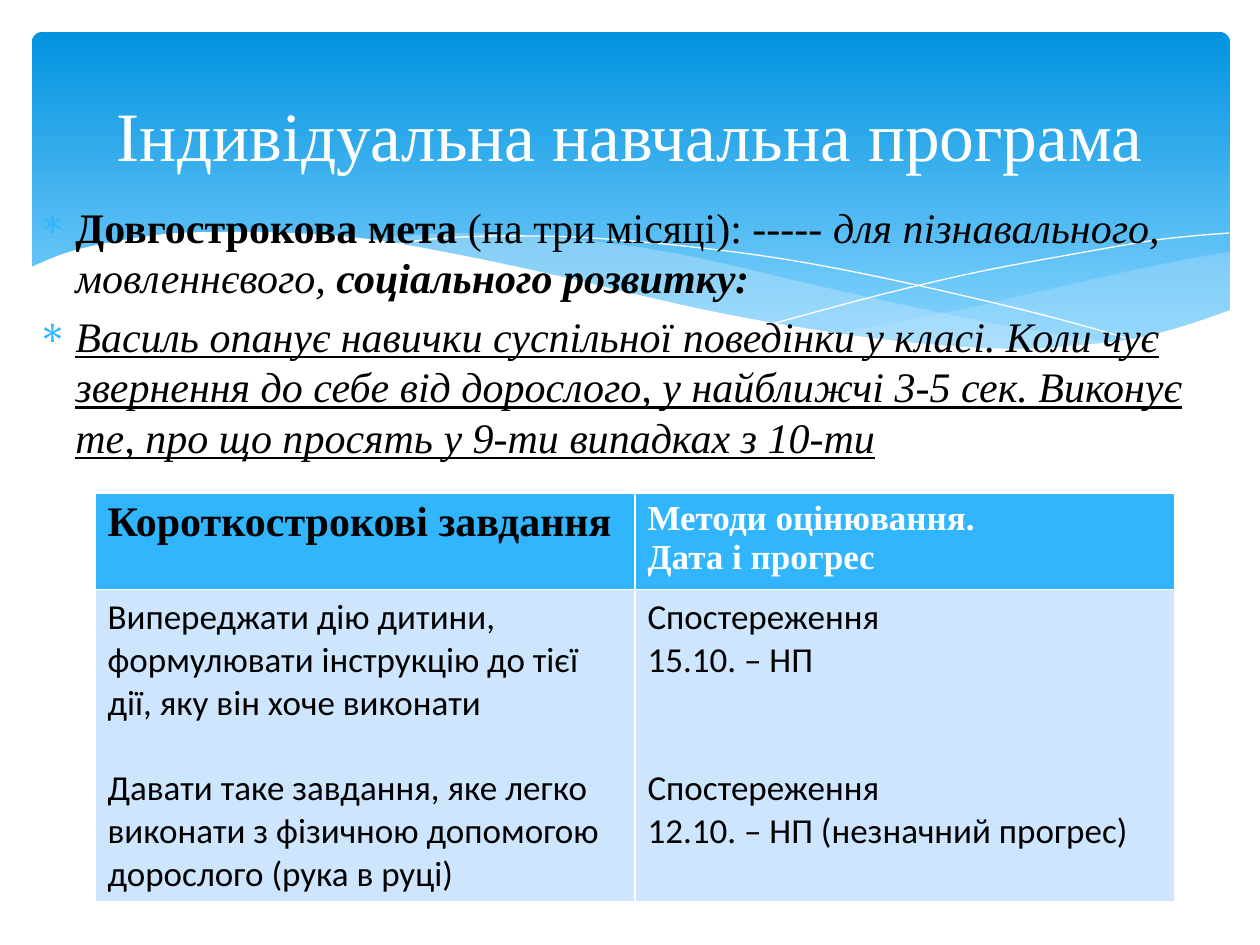
from lxml import etree
from pptx import Presentation
from pptx import util as u
from pptx.dml.color import RGBColor
from pptx.enum import shapes, text
from pptx.oxml.ns import qn

PX = 914400 / 126
COLORS = {"white": "FFFFFF", "black": "000000", "sky": "31B6FD", "pale": "CEE5FE",
          "mist": "C6E7FC", "top": "0293E0", "bottom": "83D3FE"}
SERIF, SANS = "Times New Roman", "Calibri"

# Content: runs are (text, style letters: b bold, i italic, u underline)
TITLE = "Індивідуальна навчальна програма"
GOALS = [
    [("Довгострокова мета ", "b"), ("(на три місяці): ----- ", ""),
     ("для пізнавального, мовленнєвого, ", "i"), ("соціального розвитку:", "bi")],
    [("Василь опанує навички суспільної поведінки у класі. Коли чує звернення до себе "
      "від дорослого, у найближчі 3-5 сек. Виконує те, про що просять у 9-ти випадках "
      "з 10-ти", "iu")],
]
# Cells: fill, font, size, colour, style, paragraphs as (lines skipped before, text)
TABLE = [
    [("sky", SERIF, 24, "black", "b", [(0, "Короткострокові завдання")]),
     ("sky", SERIF, 20, "white", "b", [(0, "Методи оцінювання."), (0, "Дата і прогрес")])],
    [("pale", SANS, 20, "black", "", [
        (0, "Випереджати дію дитини, формулювати інструкцію до тієї дії, яку він хоче виконати"),
        (1, "Давати таке завдання, яке легко виконати з фізичною допомогою дорослого (рука в руці)")]),
     ("pale", SANS, 20, "black", "", [
         (0, "Спостереження"), (0, "15.10. – НП"),
         (2, "Спостереження"), (0, "12.10. – НП (незначний прогрес)")])],
]
COLUMN_WIDTH, ROW_HEIGHTS = 540, [93, 312]

# Waves: each is a chain of smooth curves, given by the points they pass through
RIGHT_WAVE = [
    [(1230, 252), (1178, 261), (1085, 281), (949, 312), (833, 334)],
    [(833, 334), (888, 341), (954, 348), (1012, 350), (1076, 348), (1140, 339),
     (1196, 324), (1230, 311)]]
MIDDLE_WAVE = [
    [(1125, 344), (1017, 328), (890, 302), (793, 280), (699, 258), (616, 244),
     (529, 236), (455, 233), (394, 237), (360, 241)],
    [(360, 241), (456, 256), (566, 280), (668, 302), (779, 325), (876, 340),
     (959, 349), (1031, 350), (1080, 349), (1125, 344)]]
FALLING_LINE = [[(389, 246), (433, 239), (505, 236), (591, 238), (701, 248), (801, 262),
                 (916, 285), (1047, 316), (1143, 343)]]
RISING_LINE = [[(772, 324), (876, 296), (978, 272), (1091, 251), (1164, 239), (1229, 233)]]
WHITE_WAVE = [
    [(1231, 310), (1184, 326), (1133, 339), (1071, 346), (1019, 349), (937, 345),
     (842, 334), (730, 315), (634, 294), (563, 277), (460, 255), (368, 239),
     (290, 233), (223, 232), (166, 234), (107, 243), (66, 253), (29, 268)],
    [(29, 415), (1231, 415)]]
# Outline, fill colour or None for a line, opacity in percent
WAVES = [(RIGHT_WAVE, "mist", 29), (MIDDLE_WAVE, "mist", 40), (FALLING_LINE, None, 100),
         (RISING_LINE, None, 100), (WHITE_WAVE, "white", 100)]


def px(*lengths):
    return [u.Emu(round(length * PX)) for length in lengths]


def rgb(name):
    return RGBColor.from_string(COLORS[name])


def smooth(points, steps=5):
    """Catmull-Rom curve through the points."""
    if len(points) < 3:
        return points
    padded = [points[0], *points, points[-1]]
    curve = [points[0]]
    for a, b, c, d in zip(padded, padded[1:], padded[2:], padded[3:]):
        for step in range(1, steps + 1):
            t = step / steps
            curve.append(tuple(
                (2 * q + (r - p) * t + (2 * p - 5 * q + 4 * r - s) * t ** 2
                 + (3 * q - p - 3 * r + s) * t ** 3) / 2
                for p, q, r, s in zip(a, b, c, d)))
    return curve


def add_wave(curves, color, opacity):
    points = [px(*point) for curve in curves for point in smooth(curve)]
    builder = slide.shapes.build_freeform(*points[0], scale=1.0)
    builder.add_line_segments(points[1:], close=color is not None)
    wave = builder.convert_to_shape()
    wave.shadow.inherit = False
    if color is None:
        wave.fill.background()
        wave.line.color.rgb = rgb("white")
        wave.line.width = 0
        return
    wave.line.fill.background()
    wave.fill.solid()
    wave.fill.fore_color.rgb = rgb(color)
    if opacity < 100:
        tint = wave.fill._xPr.find(qn("a:solidFill"))[0]
        etree.SubElement(tint, qn("a:alpha"), val=str(opacity * 1000))


def add_run(paragraph, words, font, size, color, style=""):
    run = paragraph.add_run()
    run.text = words
    run.font.name, run.font.size = font, u.Pt(size)
    run.font.color.rgb = rgb(color)
    run.font.bold, run.font.italic, run.font.underline = (key in style for key in "biu")


def add_text_frame(*box):
    frame = slide.shapes.add_textbox(*px(*box)).text_frame
    frame.word_wrap = True
    return frame


def paragraphs(frame, items):
    for index, item in enumerate(items):
        yield (frame.add_paragraph() if index else frame.paragraphs[0]), item


def add_bullet(paragraph, indent):
    props = paragraph._p.get_or_add_pPr()
    props.set("marL", str(indent))
    props.set("indent", str(-indent))
    tint = etree.SubElement(props, qn("a:buClr"))
    etree.SubElement(tint, qn("a:srgbClr"), val=COLORS["sky"])
    etree.SubElement(props, qn("a:buChar"), char="∗")


prs = Presentation()
prs.slide_width, prs.slide_height = px(1260, 945)
slide = prs.slides.add_slide(prs.slide_layouts[6])

# Header panel and waves
panel = slide.shapes.add_shape(shapes.MSO_SHAPE.ROUNDED_RECTANGLE, *px(32, 32, 1198, 340))
panel.adjustments[0] = 0.03
panel.shadow.inherit = False
panel.line.fill.background()
panel.fill.gradient()
panel.fill.gradient_angle = 270
for stop, (position, color) in zip(panel.fill.gradient_stops, [(0, "top"), (0.9, "bottom")]):
    stop.position, stop.color.rgb = position, rgb(color)
for wave in WAVES:
    add_wave(*wave)

# Long-term goals
goals = add_text_frame(25, 195, 1201, 290)
for paragraph, runs in paragraphs(goals, GOALS):
    paragraph.space_before = u.Pt(4.8)
    add_bullet(paragraph, *px(38))
    for words, style in runs:
        add_run(paragraph, words, SERIF, 24, "black", style)

# Title
title = add_text_frame(63, 47, 1134, 173)
title.vertical_anchor = text.MSO_ANCHOR.MIDDLE
title.paragraphs[0].alignment = text.PP_ALIGN.CENTER
add_run(title.paragraphs[0], TITLE, SERIF, 39.6, "white")

# Short-term tasks
tasks = slide.shapes.add_table(len(TABLE), len(TABLE[0]), *px(
    95, 493, COLUMN_WIDTH * len(TABLE[0]), sum(ROW_HEIGHTS))).table
for column in tasks.columns:
    column.width = px(COLUMN_WIDTH)[0]
for row, height, cells in zip(tasks.rows, ROW_HEIGHTS, TABLE):
    row.height = px(height)[0]
    for cell, (fill, font, size, color, style, lines) in zip(row.cells, cells):
        cell.fill.solid()
        cell.fill.fore_color.rgb = rgb(fill)
        for paragraph, (skipped, words) in paragraphs(cell.text_frame, lines):
            paragraph.space_before = u.Pt(skipped * size * 1.22)
            add_run(paragraph, words, font, size, color, style)

prs.save("out.pptx")
